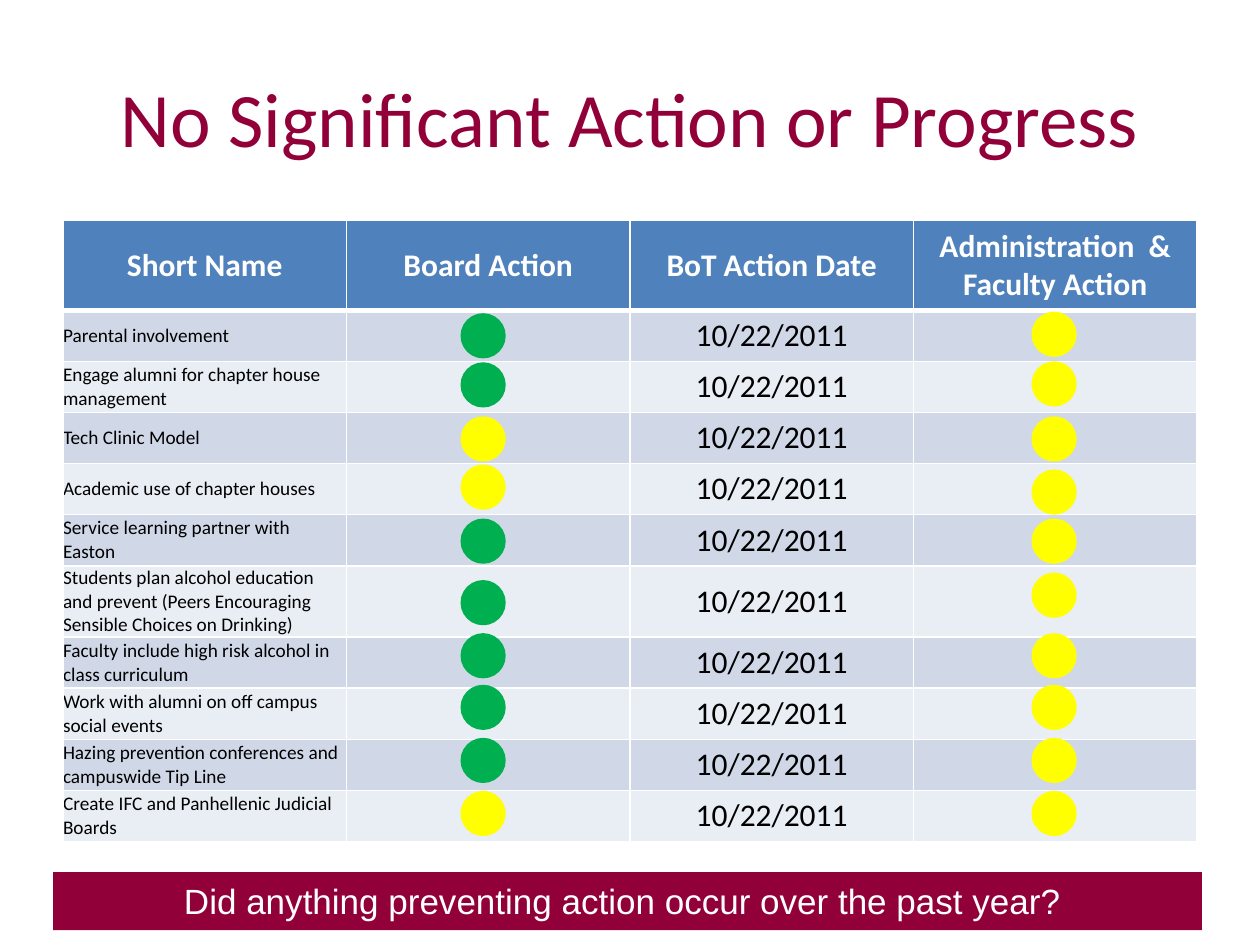
from lxml import etree
from pptx import Presentation
from pptx.dml.color import RGBColor
from pptx.enum.shapes import MSO_SHAPE
from pptx.enum.text import MSO_ANCHOR, PP_ALIGN
from pptx.oxml.ns import qn
from pptx.util import Cm, Pt

OVAL, RECTANGLE = MSO_SHAPE.OVAL, MSO_SHAPE.RECTANGLE
MIDDLE, BOTTOM = MSO_ANCHOR.MIDDLE, MSO_ANCHOR.BOTTOM
LEFT, CENTER = PP_ALIGN.LEFT, PP_ALIGN.CENTER

COLORS = {
    "maroon": "910039",
    "header": "4F81BD",
    "band": "D0D8E8",
    "light": "E9EDF4",
    "white": "FFFFFF",
    "black": "000000",
    "green": "00B050",
    "yellow": "FFFF00",
}
HEADERS = ["Short Name", "Board Action", "BoT Action Date", "Administration  & Faculty Action"]
ACTION_DATE = "10/22/2011"
ACTIONS = [
    ("Parental involvement", "green", 6.35, 6.32),
    ("Engage alumni for chapter house management", "green", 7.34, 7.32),
    ("Tech Clinic Model", "yellow", 8.43, 8.43),
    ("Academic use of chapter houses", "yellow", 9.4, 9.5),
    ("Service learning partner with Easton", "green", 10.49, 10.49),
    ("Students plan alcohol education and prevent (Peers Encouraging Sensible Choices on Drinking)",
     "green", 11.73, 11.58),
    ("Faculty include high risk alcohol in class curriculum", "green", 12.8, 12.8),
    ("Work with alumni on off campus social events", "green", 13.84, 13.84),
    ("Hazing prevention conferences and campuswide Tip Line", "green", 14.91, 14.91),
    ("Create IFC and Panhellenic Judicial Boards", "yellow", 15.98, 15.98),
]
BOARD_LEFT, FACULTY_LEFT, LIGHT_SIZE = 9.32, 20.83, 0.84


def rgb(name):
    """Return the named colour."""
    return RGBColor.from_string(COLORS[name])


def write_text(frame, text, size=18, color="black", font="Calibri", bold=False, align=CENTER):
    """Put one formatted paragraph into a text frame."""
    paragraph = frame.paragraphs[0]
    paragraph.alignment = align
    run = paragraph.add_run()
    run.text = text
    run.font.size = Pt(size)
    run.font.name = font
    run.font.bold = bold
    run.font.color.rgb = rgb(color)


class ProgressSlide:
    """Holds the style and the current slide."""

    def __init__(self, presentation):
        """Add a slide that has only a title."""
        self.slide = presentation.slides.add_slide(presentation.slide_layouts[5])

    def title(self, text, left, top, width, height):
        """Place and fill the title placeholder."""
        title = self.slide.shapes.title
        title.left, title.top, title.width, title.height = map(Cm, (left, top, width, height))
        title.text_frame.vertical_anchor = MIDDLE
        write_text(title.text_frame, text, size=44, color="maroon")

    def shape(self, kind, color, left, top, width, height):
        """Add a plain filled shape."""
        shape = self.slide.shapes.add_shape(kind, *map(Cm, (left, top, width, height)))
        shape.shadow.inherit = False
        shape.fill.solid()
        shape.fill.fore_color.rgb = rgb(color)
        shape.line.fill.background()
        return shape

    def status_light(self, color, left, top):
        """Add a round status light."""
        light = self.shape(OVAL, color, left, top, LIGHT_SIZE, LIGHT_SIZE)
        light.line.color.rgb = rgb(color)
        light.line.width = Pt(2)

    def banner(self, text, left, top, width, height):
        """Add a maroon bar with a question."""
        frame = self.shape(RECTANGLE, "maroon", left, top, width, height).text_frame
        frame.word_wrap = True
        frame.vertical_anchor = BOTTOM
        frame.margin_bottom = Cm(0.18)
        write_text(frame, text, size=20, color="white", font="Arial")

    def style_cell(self, cell, fill, bottom_width=1):
        """Give a cell its fill, anchor and white borders."""
        cell.vertical_anchor = MIDDLE
        cell.fill.solid()
        cell.fill.fore_color.rgb = rgb(fill)
        properties = cell._tc.get_or_add_tcPr()
        widths = {"a:lnL": 1, "a:lnR": 1, "a:lnT": 1, "a:lnB": bottom_width}
        for index, (tag, width) in enumerate(widths.items()):
            border = etree.Element(qn(tag), w=str(Pt(width)))
            solid = etree.SubElement(border, qn("a:solidFill"))
            etree.SubElement(solid, qn("a:srgbClr"), val=COLORS["white"])
            properties.insert(index, border)

    def table(self, left, top, width, row_height):
        """Add the table of actions."""
        row_count = len(ACTIONS) + 1
        table = self.slide.shapes.add_table(
            row_count, len(HEADERS), Cm(left), Cm(top), Cm(width), Cm(row_height * row_count)
        ).table
        for cell, header in zip(table.rows[0].cells, HEADERS):
            self.style_cell(cell, "header", bottom_width=3)
            write_text(cell.text_frame, header, color="white", bold=True)
        for row, (name, *_) in enumerate(ACTIONS, start=1):
            for cell in table.rows[row].cells:
                self.style_cell(cell, "band" if row % 2 else "light")
            name_cell = table.cell(row, 0)
            name_cell.margin_left = name_cell.margin_right = 0
            name_cell.margin_top = name_cell.margin_bottom = 0
            write_text(name_cell.text_frame, name, size=11, align=LEFT)
            write_text(table.cell(row, 2).text_frame, ACTION_DATE)


def main():
    """Build and save the presentation."""
    presentation = Presentation()
    presentation.slide_width, presentation.slide_height = Cm(25.4), Cm(19.05)
    page = ProgressSlide(presentation)
    page.title("No Significant Action or Progress", 1.27, 0.76, 22.86, 3.18)
    page.table(1.27, 4.45, 22.86, 1.03)
    for _, board_color, board_top, faculty_top in ACTIONS:
        page.status_light(board_color, BOARD_LEFT, board_top)
        page.status_light("yellow", FACULTY_LEFT, faculty_top)
    page.banner("Did anything preventing action occur over the past year? ", 1.07, 17.58, 23.16, 1.17)
    presentation.save("out.pptx")


if __name__ == "__main__":
    main()
